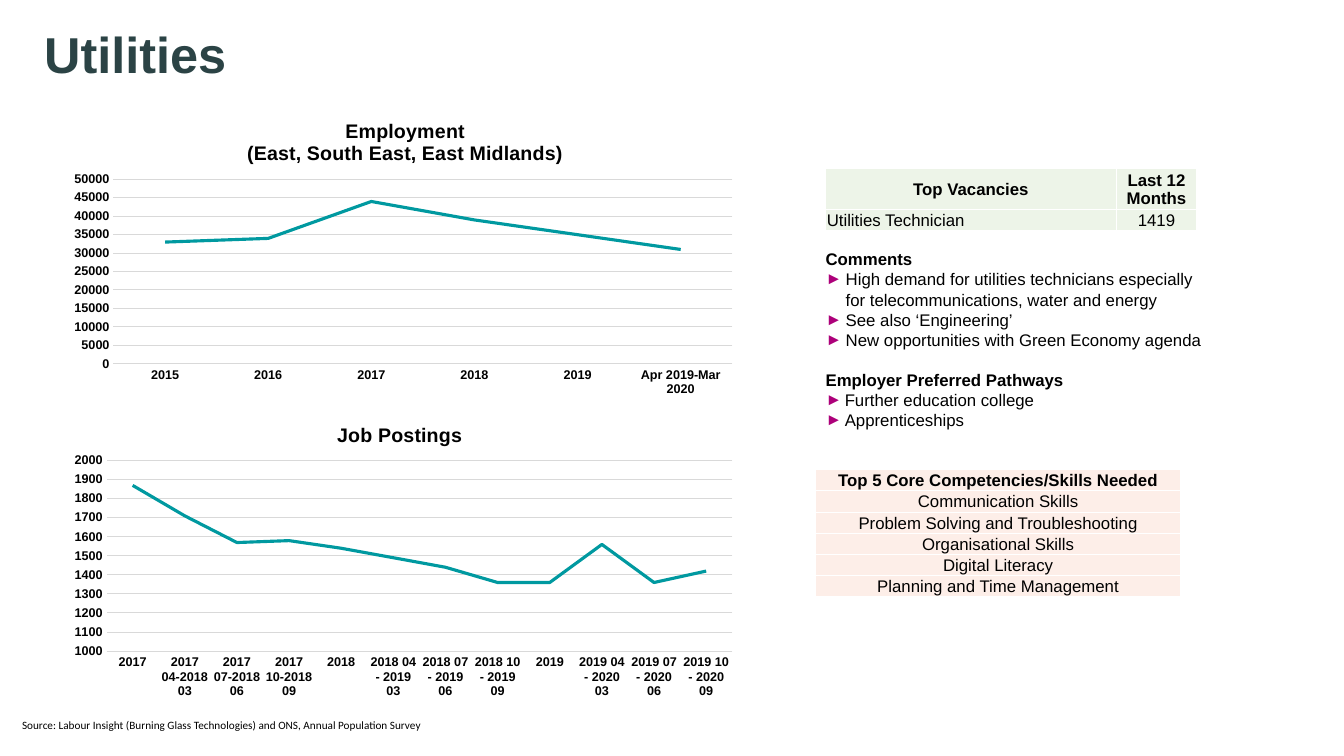
from dataclasses import dataclass

from lxml.etree import SubElement
from pptx import Presentation
from pptx.chart.data import CategoryChartData
from pptx.dml.color import RGBColor
from pptx.enum.chart import XL_CHART_TYPE as ChartType, XL_TICK_MARK as TickMark
from pptx.enum.text import MSO_ANCHOR as Anchor, PP_ALIGN as Align
from pptx.oxml import parse_xml
from pptx.oxml.ns import nsdecls, qn
from pptx.util import Inches, Pt

BLACK, SLATE, TEAL, MAGENTA = "000000", "2B4345", "0099A0", "AD007A"
GREEN, PEACH, WHITE, GREY = "EDF4E8", "FDEEE8", "FFFFFF", "D9D9D9"


@dataclass
class Trend:
    title: list[str]
    top: float
    points: dict[str, int]
    axis: tuple[int, int, int]  # minimum, maximum, step
    title_at: dict[str, float]  # shares of the chart's size
    plot_at: dict[str, float]


@dataclass
class Grid:
    left: float
    top: float
    widths: list[float]
    heights: list[float]
    rows: list[list[str]]
    fill: str
    left_aligned: tuple[str, ...] = ()


@dataclass
class Section:
    heading: str
    indent: float
    points: list[str]


TRENDS = [
    Trend(["Job Postings"], 4,
          {"2017": 1870, "2017 04-2018 03": 1710, "2017 07-2018 06": 1570,
           "2017 10-2018 09": 1580, "2018": 1540, "2018 04 - 2019 03": 1490,
           "2018 07 - 2019 06": 1440, "2018 10 - 2019 09": 1360, "2019": 1360,
           "2019 04 - 2020 03": 1560, "2019 07 - 2020 06": 1360,
           "2019 10 - 2020 09": 1420},
          (1000, 2000, 100), {"x": 0.4, "y": 0.05},
          {"x": 0.07, "y": 0.19, "w": 0.91, "h": 0.63}),
    Trend(["Employment", "(East, South East, East Midlands)"], 1,
          {"2015": 33000, "2016": 34000, "2017": 44000, "2018": 39000,
           "2019": 35000, "Apr 2019-Mar 2020": 31000},
          (0, 50000, 5000), {"x": 0.27, "y": 0.05},
          {"x": 0.08, "y": 0.26, "w": 0.9, "h": 0.61}),
]

GRIDS = [
    Grid(8.19, 1.67, [2.88, 0.8], [0.38, 0.21],
         [["Top Vacancies", "Last 12 Months"], ["Utilities Technician", "1419"]],
         GREEN, ("Utilities Technician",)),
    Grid(8.09, 4.66, [3.62], [0.21] * 6,
         [["Top 5 Core Competencies/Skills Needed"], ["Communication Skills"],
          ["Problem Solving and Troubleshooting"], ["Organisational Skills"],
          ["Digital Literacy"], ["Planning and Time Management"]],
         PEACH),
]

SECTIONS = [
    Section("Comments", 0.2, [
        "High demand for utilities technicians especially for telecommunications,"
        " water and energy",
        "See also ‘Engineering’",
        "New opportunities with Green Economy agenda"]),
    Section("Employer Preferred Pathways", 0.19,
            ["Further education college", "Apprenticeships"]),
]


def rgb(value: str) -> RGBColor:
    return RGBColor.from_string(value)


def set_font(font, size: float, bold: bool = False, color: str = BLACK,
             name: str = "Arial") -> None:
    font.size, font.bold, font.name = Pt(size), bold, name
    font.color.rgb = rgb(color)


def add_text_frame(page, left: float, top: float, width: float, height: float):
    frame = page.shapes.add_textbox(
        Inches(left), Inches(top), Inches(width), Inches(height)).text_frame
    frame.word_wrap = True
    return frame


def set_layout(parent, shares: dict[str, float], inner: bool = False) -> None:
    """Fix the place of a chart title or plot area within its chart."""
    target = '<c:layoutTarget val="inner"/>' if inner else ""
    modes = "".join(f'<c:{key}Mode val="edge"/>' for key in "xy")
    values = "".join(f'<c:{key} val="{share}"/>' for key, share in shares.items())
    layout = parse_xml(f'<c:layout {nsdecls("c")}><c:manualLayout>{target}{modes}'
                       f'{values}</c:manualLayout></c:layout>')
    previous = parent.find(qn("c:layout"))
    if previous is not None:
        parent.replace(previous, layout)
    else:
        parent.insert(0 if inner else 1, layout)


def draw_trend(page, trend: Trend) -> None:
    data = CategoryChartData()
    data.categories = list(trend.points)
    data.add_series("Series 1", list(trend.points.values()))
    chart = page.shapes.add_chart(ChartType.LINE, Inches(0.58), Inches(trend.top),
                                  Inches(6.82), Inches(3), data).chart
    chart.has_legend = False
    set_font(chart.font, 10, True)

    frame = chart.chart_title.text_frame
    for index, line in enumerate(trend.title):
        para = frame.add_paragraph() if index else frame.paragraphs[0]
        para.text = line
        set_font(para.font, 14, True)
    set_layout(chart.chart_title._element, trend.title_at)
    set_layout(chart._chartSpace.chart.plotArea, trend.plot_at, inner=True)

    categories, values = chart.category_axis, chart.value_axis
    for axis in (categories, values):
        axis.major_tick_mark = axis.minor_tick_mark = TickMark.NONE
        set_font(axis.tick_labels.font, 9, True)
    values.minimum_scale, values.maximum_scale, values.major_unit = trend.axis
    values.format.line.fill.background()
    for line in (categories.format.line, values.major_gridlines.format.line):
        line.color.rgb = rgb(GREY)
        line.width = Pt(0.75)

    series = chart.plots[0].series[0]
    series.smooth = False
    series.format.line.color.rgb = rgb(TEAL)
    series.format.line.width = Pt(2.25)
    chart.plots[0].vary_by_categories = False


def add_borders(cell) -> None:
    properties = cell._tc.get_or_add_tcPr()
    for index, side in enumerate(("lnL", "lnR", "lnT", "lnB")):
        properties.insert(index, parse_xml(
            f'<a:{side} {nsdecls("a")} w="12700"><a:solidFill>'
            f'<a:srgbClr val="{WHITE}"/></a:solidFill></a:{side}>'))


def draw_grid(page, grid: Grid) -> None:
    table = page.shapes.add_table(
        len(grid.rows), len(grid.widths), Inches(grid.left), Inches(grid.top),
        Inches(sum(grid.widths)), Inches(sum(grid.heights))).table
    table.horz_banding = False
    for column, width in zip(table.columns, grid.widths):
        column.width = Inches(width)
    for row_index, (row, height) in enumerate(zip(grid.rows, grid.heights)):
        table.rows[row_index].height = Inches(height)
        for column_index, text in enumerate(row):
            cell = table.cell(row_index, column_index)
            cell.text = text
            cell.margin_left = cell.margin_right = cell.margin_top = Inches(0.01)
            cell.margin_bottom = 0
            cell.vertical_anchor = Anchor.MIDDLE
            cell.fill.solid()
            cell.fill.fore_color.rgb = rgb(grid.fill)
            add_borders(cell)
            para = cell.text_frame.paragraphs[0]
            para.alignment = Align.LEFT if text in grid.left_aligned else Align.CENTER
            set_font(para.font, 12, row_index == 0)


def add_bullet(para, indent: float) -> None:
    properties = para._p.get_or_add_pPr()
    properties.set("marL", str(Inches(indent)))
    properties.set("indent", str(-Inches(indent)))
    color = SubElement(properties, qn("a:buClr"))
    SubElement(color, qn("a:srgbClr"), val=MAGENTA)
    SubElement(properties, qn("a:buFont"), typeface="Arial")
    SubElement(properties, qn("a:buChar"), char="►")


def draw_sections(page) -> None:
    frame = add_text_frame(page, 8.09, 2.42, 4.03, 2.12)
    for index, section in enumerate(SECTIONS):
        heading = frame.add_paragraph() if index else frame.paragraphs[0]
        heading.text = section.heading
        if index:
            heading.space_before = Pt(14)
        set_font(heading.font, 12, True)
        for point in section.points:
            para = frame.add_paragraph()
            para.text = point
            add_bullet(para, section.indent)
            set_font(para.font, 12)


def main() -> None:
    deck = Presentation()
    deck.slide_width, deck.slide_height = Inches(13.33), Inches(7.5)
    page = deck.slides.add_slide(deck.slide_layouts[6])

    title = add_text_frame(page, 0.34, 0, 12.66, 1.05)
    title.vertical_anchor = Anchor.MIDDLE
    title.text = "Utilities"
    set_font(title.paragraphs[0].font, 36, True, SLATE)

    for trend in TRENDS:
        draw_trend(page, trend)
    for grid in GRIDS:
        draw_grid(page, grid)
    draw_sections(page)

    source = add_text_frame(page, 0.12, 7.08, 5.45, 0.37)
    source.text = ("Source: Labour Insight (Burning Glass Technologies) and ONS, "
                   "Annual Population Survey")
    set_font(source.paragraphs[0].font, 8, name="Calibri")
    deck.save("out.pptx")


if __name__ == "__main__":
    main()
